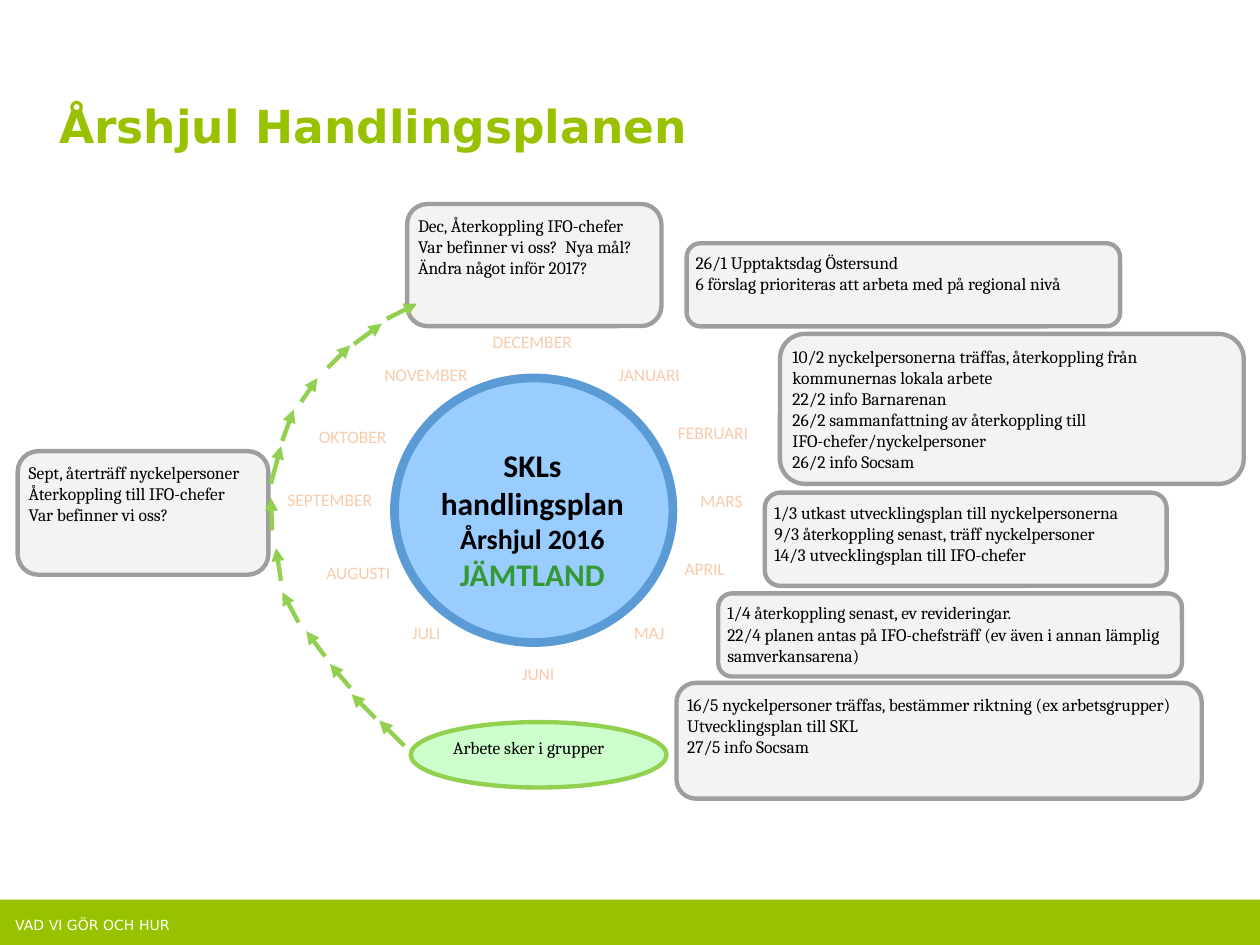
from lxml import etree
from pptx import Presentation
from pptx.dml.color import RGBColor
from pptx.enum.shapes import MSO_CONNECTOR, MSO_SHAPE
from pptx.enum.text import MSO_ANCHOR, PP_ALIGN
from pptx.oxml.ns import qn
from pptx.util import Pt

RECTANGLE = MSO_SHAPE.RECTANGLE
ROUNDED = MSO_SHAPE.ROUNDED_RECTANGLE
ALTERNATE = MSO_SHAPE.FLOWCHART_ALTERNATE_PROCESS
OVAL = MSO_SHAPE.OVAL
CONNECTOR_OVAL = MSO_SHAPE.FLOWCHART_CONNECTOR
STRAIGHT = MSO_CONNECTOR.STRAIGHT
TOP, MIDDLE = MSO_ANCHOR.TOP, MSO_ANCHOR.MIDDLE
LEFT, CENTER = PP_ALIGN.LEFT, PP_ALIGN.CENTER

LIME, GREEN, PEACH = "98C200", "92D050", "F8CBAD"
INSET = 2.88

MONTHS = [
    ("JANUARI", 350.6, 205.2, 47.5),
    ("FEBRUARI", 384.5, 238.3, 47),
    ("MARS", 397.4, 277.2, 34),
    ("APRIL", 388.3, 316.1, 33),
    ("MAJ", 359.3, 352.8, 32),
    ("JUNI", 295.4, 375.8, 29.5),
    ("JULI", 232.6, 352.8, 29),
    ("AUGUSTI", 183.6, 318.2, 45),
    ("SEPTEMBER", 161.3, 276.5, 57.6),
    ("OKTOBER", 179.3, 240.5, 50.4),
    ("NOVEMBER", 216.7, 205.2, 54.7),
    ("DECEMBER", 278.6, 186.5, 52),
]

CARDS = [
    (ALTERNATE, (392.4, 139, 247.7, 47.5),
     ["26/1 Upptaktsdag Östersund",
      "6 förslag prioriteras att arbeta med på regional nivå"]),
    (ROUNDED, (445.7, 190.8, 265, 85.7),
     ["10/2 nyckelpersonerna träffas, återkoppling från kommunernas lokala arbete",
      "22/2 info Barnarenan",
      "26/2 sammanfattning av återkoppling till IFO-chefer/nyckelpersoner",
      "26/2 info Socsam"]),
    (ROUNDED, (437, 281.5, 229.7, 53.3),
     ["1/3 utkast utvecklingsplan till nyckelpersonerna",
      "9/3 återkoppling senast, träff nyckelpersoner",
      "14/3 utvecklingsplan till IFO-chefer"]),
    (ROUNDED, (410.4, 339.1, 265, 47.5),
     ["1/4 återkoppling senast, ev revideringar.",
      "22/4 planen antas på IFO-chefsträff (ev även i annan lämplig samverkansarena)"]),
    (ROUNDED, (386.6, 390.2, 300.2, 66.2),
     ["16/5 nyckelpersoner träffas, bestämmer riktning (ex arbetsgrupper)",
      "Utvecklingsplan till SKL",
      "27/5 info Socsam"]),
    (ROUNDED, (10.1, 257.8, 143.3, 70.6),
     ["Sept, återträff nyckelpersoner",
      "Återkoppling till IFO-chefer",
      "Var befinner vi oss?"]),
    (ROUNDED, (232.6, 116.6, 145.4, 69.8),
     ["Dec, Återkoppling IFO-chefer",
      "Var befinner vi oss?  Nya mål?",
      "Ändra något inför 2017?"]),
]

ARROWS = [
    (231.1, 426.2, 216.7, 411.8),
    (214.6, 410.4, 200.9, 396.7),
    (200.2, 393.1, 188.6, 379.4),
    (185.8, 375.1, 175, 360.7),
    (170.6, 355.7, 161.3, 338.4),
    (160.6, 331.9, 157.7, 313.2),
    (155.5, 303.1, 154.8, 284.4),
    (154.8, 276.5, 160.6, 254.9),
    (161.3, 252, 167.8, 234),
    (172.1, 229.7, 181.4, 216),
    (187.2, 210.2, 200.2, 197.3),
    (202.3, 196.6, 218.2, 185),
    (221, 182.2, 238.3, 173.5),
]


def color(value):
    return RGBColor.from_string(value)


def set_frame(frame, inset=INSET, anchor=TOP):
    frame.word_wrap = True
    frame.vertical_anchor = anchor
    frame.margin_left = frame.margin_right = Pt(inset)
    frame.margin_top = frame.margin_bottom = Pt(inset)


def add_run(paragraph, text, size=10, font="Cambria", fill="000000", bold=False):
    run = paragraph.add_run()
    run.text = text
    run.font.size = Pt(size)
    run.font.name = font
    run.font.bold = bold
    run.font.color.rgb = color(fill)


def write_lines(frame, lines, align=LEFT, **style):
    for index, line in enumerate(lines):
        paragraph = frame.add_paragraph() if index else frame.paragraphs[0]
        paragraph.alignment = align
        add_run(paragraph, line, **style)


def add_text(slide, box, lines, **style):
    shape = slide.shapes.add_textbox(*map(Pt, box))
    set_frame(shape.text_frame)
    write_lines(shape.text_frame, lines, **style)
    return shape.text_frame


def add_box(slide, kind, box, fill, line=None, width=2.5, lines=()):
    shape = slide.shapes.add_shape(kind, *map(Pt, box))
    shape.shadow.inherit = False
    shape.fill.solid()
    shape.fill.fore_color.rgb = color(fill)
    if line:
        shape.line.color.rgb = color(line)
        shape.line.width = Pt(width)
    else:
        shape.line.fill.background()
    set_frame(shape.text_frame)
    write_lines(shape.text_frame, lines)


def add_arrow(slide, points):
    connector = slide.shapes.add_connector(STRAIGHT, *map(Pt, points))
    connector.line.color.rgb = color(GREEN)
    connector.line.width = Pt(2.5)
    line = connector.line._get_or_add_ln()
    etree.SubElement(line, qn("a:tailEnd"), type="triangle")
    etree.SubElement(connector._element.spPr, qn("a:effectLst"))


def set_title(slide, text):
    title = slide.shapes.title
    title.left, title.top, title.width, title.height = map(Pt, (33.8, 54.7, 609, 33.8))
    set_frame(title.text_frame, inset=0, anchor=MIDDLE)
    write_lines(title.text_frame, [text], size=26, font="DejaVu Sans", fill=LIME, bold=True)


def add_footer(slide):
    add_box(slide, RECTANGLE, (0, 514, 720, 26), LIME)
    frame = add_text(slide, (5.8, 519.8, 110, 18), ["VAD VI GÖR OCH HUR"],
                     size=8, font="DejaVu Sans", fill="FFFFFF")
    frame.paragraphs[0].line_spacing = 1.1


def add_hub(slide):
    add_box(slide, OVAL, (225.4, 216, 159.1, 151.2), "99CCFF", "5B9BD5", 5)
    style = {"font": "Calibri", "bold": True}
    frame = add_text(slide, (232.6, 252, 143.3, 82), ["SKLs handlingsplan "],
                     align=CENTER, size=18, **style)
    add_run(frame.paragraphs[0], "Årshjul 2016", size=16, **style)
    place = frame.add_paragraph()
    place.alignment = CENTER
    add_run(place, "JÄMTLAND", size=18, fill="339933", **style)


def main():
    presentation = Presentation()
    presentation.slide_width, presentation.slide_height = Pt(720), Pt(540)
    slide = presentation.slides.add_slide(presentation.slide_layouts[5])
    set_title(slide, "Årshjul Handlingsplanen")
    add_footer(slide)
    add_hub(slide)
    for month, left, top, width in MONTHS:
        add_text(slide, (left, top, width, 20), [month], font="Calibri", fill=PEACH)
    for kind, box, lines in CARDS:
        add_box(slide, kind, box, "F3F3F3", "9E9E9E", lines=lines)
    add_box(slide, CONNECTOR_OVAL, (234.7, 412.6, 146.2, 37.4), "CCFFCC", GREEN,
            lines=["Arbete sker i grupper"])
    for points in ARROWS:
        add_arrow(slide, points)
    presentation.save("out.pptx")


if __name__ == "__main__":
    main()
